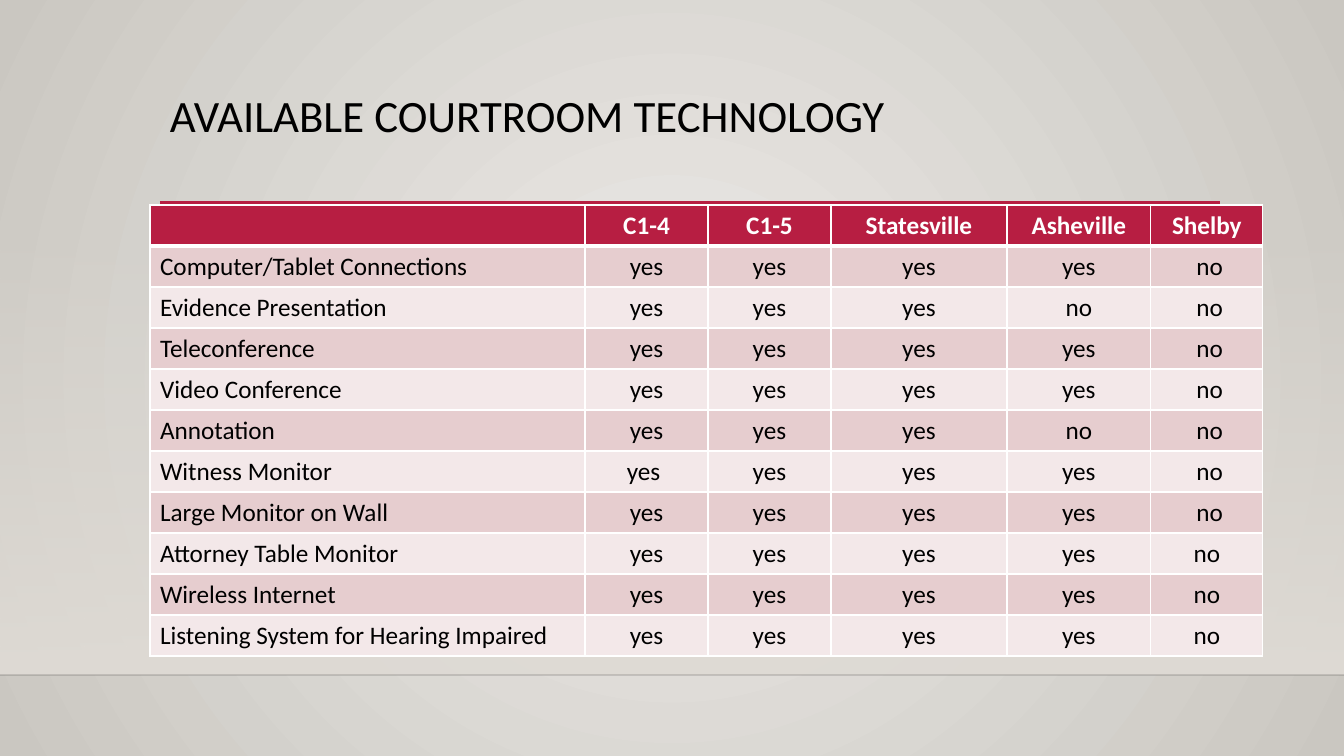
"""Builds the slide on available courtroom technology."""
from lxml import etree
from pptx import Presentation
from pptx import util as u
from pptx.dml.color import RGBColor
from pptx.enum import shapes, text
from pptx.oxml import ns

TITLE = "AVAILABLE COURTROOM TECHNOLOGY"
HEADER = ("", "C1-4", "C1-5", "Statesville", "Asheville", "Shelby")
ROWS = [
    ("Computer/Tablet Connections", "yes", "yes", "yes", "yes", " no"),
    ("Evidence Presentation", "yes", "yes", "yes", "no", " no"),
    ("Teleconference", "yes", "yes", "yes", "yes", " no"),
    ("Video Conference", "yes", "yes", "yes", "yes", " no"),
    ("Annotation", "yes", "yes", "yes", "no", " no"),
    ("Witness Monitor", "yes ", "yes", "yes", "yes", " no"),
    ("Large Monitor on Wall", "yes", "yes", "yes", "yes", " no"),
    ("Attorney Table Monitor", "yes", "yes", "yes", "yes", "no"),
    ("Wireless Internet", "yes", "yes", "yes", "yes", "no"),
    ("Listening System for Hearing Impaired", "yes", "yes", "yes", "yes", "no"),
]
COLORS = {
    "center": "ECEAE7", "edge": "CAC7C1", "wall": "DFDBD5", "floor": "000001",
    "accent": "B71E42", "odd": "E6CDCF", "even": "F3E8E9",
    "ink": "000000", "white": "FFFFFF",
}
FONT = "Calibri"
SLIDE_W, SLIDE_H = 1344, 756
WALL_TOP, FLOOR_Y = 223, 675
RULE_LEFT, RULE_RIGHT, RULE_Y = 160, 1220, 203
TITLE_BOX = (160, 89, 1058, 116)
TABLE_LEFT, TABLE_TOP, ROW_H = 150, 205, 41
COL_WIDTHS = (435, 123, 123, 176, 144, 112)


def px(n):
    return u.Emu(round(n * 914400 / 100.8))


def rgb(name):
    return RGBColor.from_string(COLORS[name])


def sub(parent, tag, **attrs):
    return etree.SubElement(parent, ns.qn(tag), attrs)


def set_alpha(element, percents):
    for clr, percent in zip(element.iter(ns.qn("a:srgbClr")), percents):
        sub(clr, "a:alpha", val=str(percent * 1000))


def set_gradient(fill, first, last):
    fill.gradient()
    for stop, name, position in zip(fill.gradient_stops, (first, last), (0, 1)):
        stop.color.rgb = rgb(name)
        stop.position = position


def add_background(s):
    fill = s.background.fill
    set_gradient(fill, "center", "edge")
    lin = next(s.background._cSld.iter(ns.qn("a:lin")))
    grad = lin.getparent()
    grad.remove(lin)
    radial = sub(grad, "a:path")
    radial.set("path", "circle")
    sub(radial, "a:fillToRect", l="50000", t="50000", r="50000", b="50000")


def add_wall(s):
    sp = s.shapes.add_shape(shapes.MSO_SHAPE.RECTANGLE, 0, px(WALL_TOP),
                            px(SLIDE_W), px(FLOOR_Y - WALL_TOP))
    sp.shadow.inherit = False
    sp.line.fill.background()
    set_gradient(sp.fill, "wall", "wall")
    sp.fill.gradient_angle = 270
    set_alpha(sp._element.spPr, (0, 100))


def add_rule(s, left, right, y, color, width):
    line = s.shapes.add_connector(shapes.MSO_CONNECTOR.STRAIGHT,
                                  px(left), px(y), px(right), px(y))
    line.line.color.rgb = rgb(color)
    line.line.width = u.Pt(width)
    sub(line._element.spPr, "a:effectLst")
    return line


def add_run(p, words, size, color, bold=False):
    r = p.add_run()
    r.text = words
    r.font.name, r.font.size, r.font.bold = FONT, u.Pt(size), bold
    r.font.color.rgb = rgb(color)


def add_title(s):
    tf = s.shapes.add_textbox(*map(px, TITLE_BOX)).text_frame
    tf.word_wrap = True
    tf.vertical_anchor = text.MSO_ANCHOR.TOP
    p = tf.paragraphs[0]
    p.line_spacing = 0.9
    add_run(p, TITLE, 32, "ink")


def set_borders(cell, bottom):
    tc_pr = cell._tc.get_or_add_tcPr()
    for i, (side, width) in enumerate((("L", 1), ("R", 1), ("T", 1), ("B", bottom))):
        ln = etree.Element(ns.qn("a:ln" + side), w=str(u.Pt(width)))
        sub(sub(ln, "a:solidFill"), "a:srgbClr", val=COLORS["white"])
        tc_pr.insert(i, ln)


def add_table(s):
    grid = [HEADER, *ROWS]
    table = s.shapes.add_table(len(grid), len(HEADER), px(TABLE_LEFT), px(TABLE_TOP),
                               px(sum(COL_WIDTHS)), px(ROW_H * len(grid))).table
    for column, width in zip(table.columns, COL_WIDTHS):
        column.width = px(width)
    for i, values in enumerate(grid):
        table.rows[i].height = px(ROW_H)
        head = i == 0
        for j, value in enumerate(values):
            cell = table.cell(i, j)
            cell.fill.solid()
            cell.fill.fore_color.rgb = rgb("accent" if head else "odd" if i % 2 else "even")
            set_borders(cell, 3 if head else 1)
            p = cell.text_frame.paragraphs[0]
            p.alignment = text.PP_ALIGN.CENTER if j else text.PP_ALIGN.LEFT
            if value:
                add_run(p, value, 18, "white" if head else "ink", head)
            else:
                p.font.size = u.Pt(18)


def main():
    prs = Presentation()
    prs.slide_width, prs.slide_height = px(SLIDE_W), px(SLIDE_H)
    s = prs.slides.add_slide(prs.slide_layouts[6])
    add_background(s)
    add_wall(s)
    floor = add_rule(s, 0, SLIDE_W, FLOOR_Y, "floor", 1)
    set_alpha(floor._element.spPr, (20,))
    add_rule(s, RULE_LEFT, RULE_RIGHT, RULE_Y, "accent", 2.5)
    add_title(s)
    add_table(s)
    prs.save("out.pptx")


if __name__ == "__main__":
    main()
